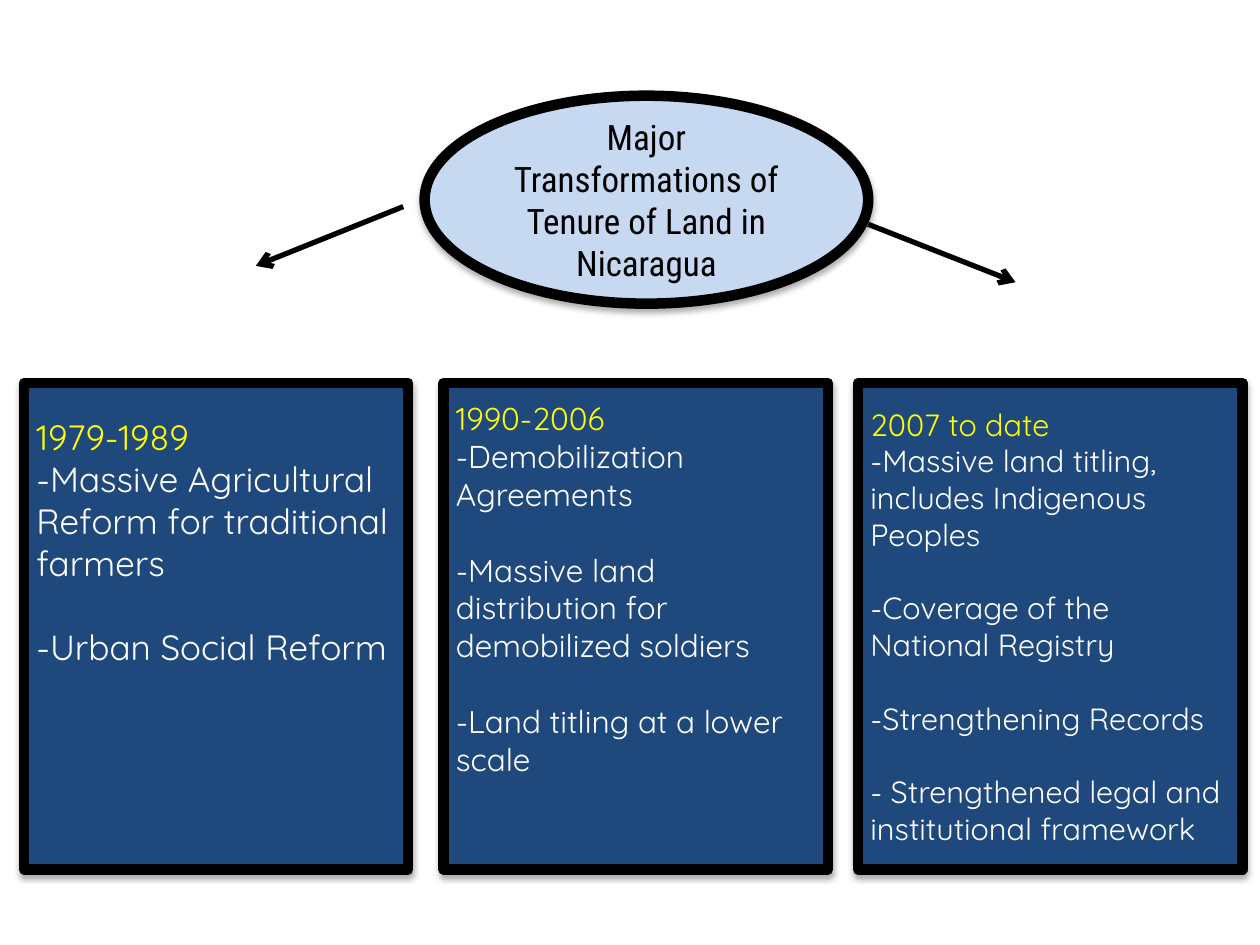
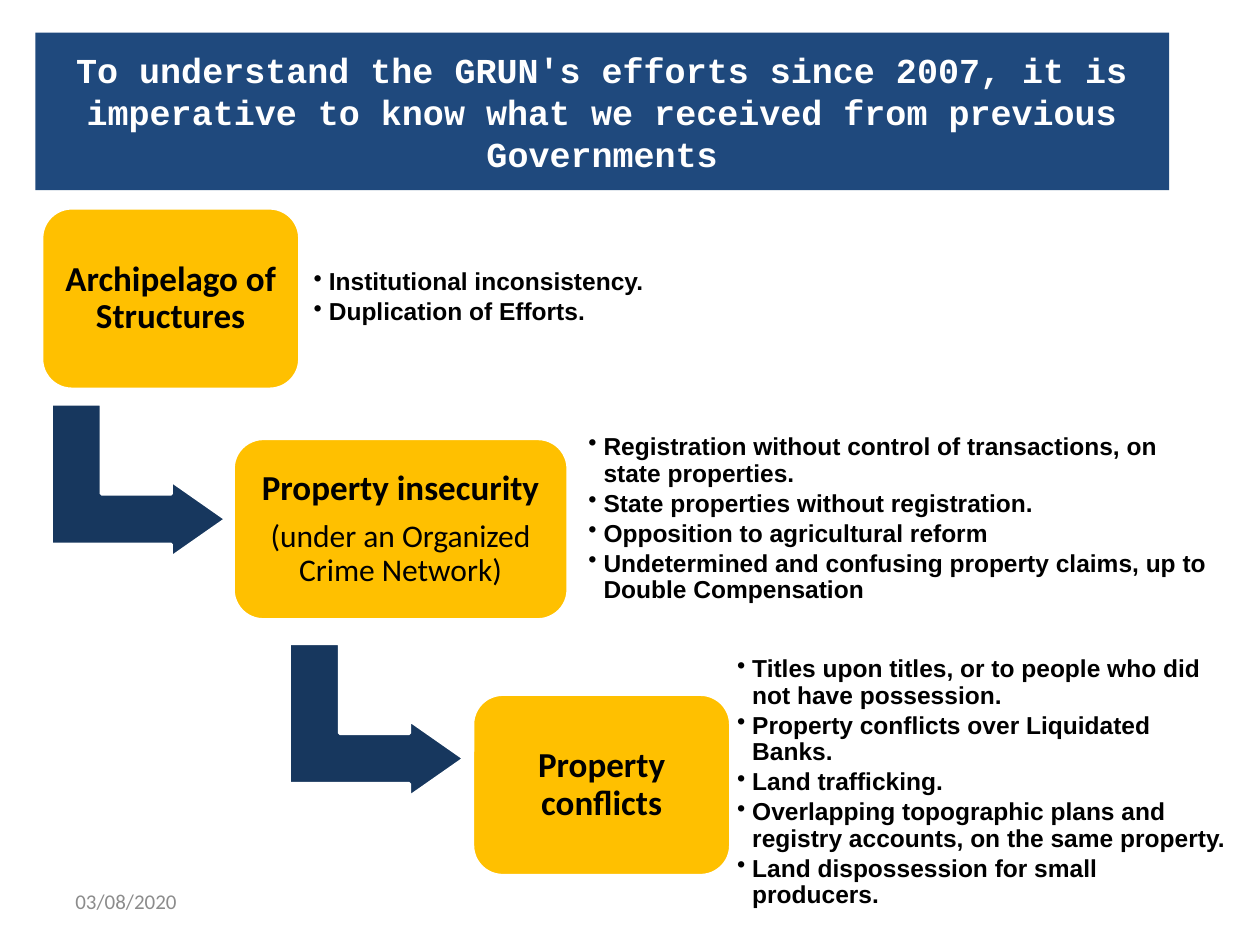
from typing import NamedTuple

from lxml import etree
from pptx import Presentation
from pptx.dml.color import RGBColor
from pptx.enum.shapes import MSO_CONNECTOR, MSO_SHAPE
from pptx.enum.text import MSO_ANCHOR, MSO_AUTO_SIZE, PP_ALIGN
from pptx.oxml.ns import qn
from pptx.util import Inches, Pt

ELLIPSE, RECTANGLE = MSO_SHAPE.OVAL, MSO_SHAPE.RECTANGLE
ROUNDED, BENT_ARROW = MSO_SHAPE.ROUNDED_RECTANGLE, MSO_SHAPE.BENT_UP_ARROW
STRAIGHT = MSO_CONNECTOR.STRAIGHT
TOP, MIDDLE = MSO_ANCHOR.TOP, MSO_ANCHOR.MIDDLE
LEFT, CENTER = PP_ALIGN.LEFT, PP_ALIGN.CENTER
NO_AUTOFIT = MSO_AUTO_SIZE.NONE
TITLE_ONLY, BLANK = 5, 6

BLACK = RGBColor(0x00, 0x00, 0x00)
WHITE = RGBColor(0xFF, 0xFF, 0xFF)
YELLOW = RGBColor(0xFF, 0xFF, 0x00)
NAVY = RGBColor(0x1F, 0x49, 0x7D)
DARK_NAVY = RGBColor(0x17, 0x37, 0x5E)
PALE_BLUE = RGBColor(0xC6, 0xD9, 0xF1)
AMBER = RGBColor(0xFF, 0xC0, 0x00)
GRAY = RGBColor(0x8C, 0x8C, 0x8C)

TOPIC_FONT = {"name": "Roboto Condensed", "size": Pt(20), "color": BLACK}
TITLE_FONT = {"name": "Courier New", "size": Pt(20), "color": WHITE, "bold": True}
STEP_FONT = {"name": "Calibri", "size": Pt(20), "color": BLACK, "bold": True}
NOTE_FONT = {"name": "Calibri", "size": Pt(18), "color": BLACK, "bold": False}
BULLET_FONT = {"name": "Arial", "size": Pt(14), "color": BLACK, "bold": True}
DATE_FONT = {"name": "Calibri", "size": Pt(12), "color": GRAY}

STEP_SPACING = {"alignment": CENTER, "line_spacing": 0.9, "space_after": Pt(7)}
BULLET_SPACING = {"alignment": LEFT, "line_spacing": 0.9, "space_after": Pt(2)}

PANEL_TOP, PANEL_WIDTH, PANEL_HEIGHT = 3.04, 3.05, 3.86
STEP_HEIGHT = 1.44


class Box(NamedTuple):
    """Left, top, width and height in inches."""
    left: float
    top: float
    width: float
    height: float

    def lengths(self) -> list:
        return [Inches(value) for value in self]


class Era(NamedTuple):
    left: float
    size: float
    text_top: float
    years: str
    changes: list


class Step(NamedTuple):
    box: Box
    heading: str
    note: str
    bullets_box: Box
    bullets: list


ERAS = [
    Era(0.19, 20, 0.26, "1979-1989", [
        "-Massive Agricultural Reform for traditional farmers",
        "-Urban Social Reform"]),
    Era(3.52, 18, 0.13, "1990-2006", [
        "-Demobilization Agreements",
        "-Massive land distribution for demobilized soldiers",
        "-Land titling at a lower scale"]),
    Era(6.81, 17.5, 0.18, "2007 to date", [
        "-Massive land titling, includes Indigenous Peoples",
        "-Coverage of the National Registry",
        "-Strengthening Records",
        "- Strengthened legal and institutional framework"]),
]
ERA_ARROWS = [((3.2, 1.64), (2.03, 2.11)), ((6.89, 1.78), (8.06, 2.24))]

STEPS = [
    Step(Box(0.33, 1.65, 2.05, STEP_HEIGHT), "Archipelago of Structures", "",
         Box(2.43, 1.82, 3.85, 1.09), [
             "Institutional inconsistency.",
             "Duplication of Efforts."]),
    Step(Box(1.85, 3.48, 2.66, STEP_HEIGHT), "Property insecurity",
         "(under an Organized Crime Network)",
         Box(4.61, 3.12, 5.12, 2), [
             "Registration without control of transactions, on state properties.",
             "State properties without registration.",
             "Opposition to agricultural reform",
             "Undetermined and confusing property claims, up to Double Compensation"]),
    Step(Box(3.75, 5.51, 2.05, STEP_HEIGHT), "Property conflicts", "",
         Box(5.79, 5.18, 4.02, 2.07), [
             "Titles upon titles, or to people who did not have possession.",
             "Property conflicts over Liquidated Banks.",
             "Land trafficking.",
             "Overlapping topographic plans and registry accounts, on the same property.",
             "Land dispossession for small producers."]),
]
STEP_ARROWS = [Box(0.49, 3.12, 1.22, 1.39), Box(2.38, 5.02, 1.22, 1.39)]


def set_all(target, values: dict) -> None:
    for name, value in values.items():
        setattr(target, name, value)


def write(frame, text: str, font: dict, spacing: dict):
    """Fill the first paragraph if it is empty, otherwise add one."""
    para = frame.paragraphs[0]
    if para.runs:
        para = frame.add_paragraph()
    set_all(para, spacing)
    span = para.add_run()
    span.text = text
    set_all(span.font, {key: font[key] for key in font if key != "color"})
    span.font.color.rgb = font["color"]
    return para


def set_frame(frame, anchor=MIDDLE, margin: float | None = None) -> None:
    set_all(frame, {"word_wrap": True, "auto_size": NO_AUTOFIT,
                    "vertical_anchor": anchor})
    if margin is not None:
        sides = ("left", "top", "right", "bottom")
        set_all(frame, {f"margin_{side}": Inches(margin) for side in sides})


def add_figure(page, kind, box: Box, fill: RGBColor, line: RGBColor, width: float):
    figure = page.shapes.add_shape(kind, *box.lengths())
    figure.shadow.inherit = False
    figure.fill.solid()
    figure.fill.fore_color.rgb = fill
    figure.line.color.rgb = line
    figure.line.width = Pt(width)
    set_frame(figure.text_frame)
    return figure


def add_shadowed_figure(page, kind, box: Box, fill: RGBColor):
    """Draw a figure with a heavy black outline and a soft shadow below."""
    figure = add_figure(page, kind, box, fill, BLACK, 6)
    effects = figure._element.spPr.find(qn("a:effectLst"))
    shadow = etree.SubElement(effects, qn("a:outerShdw"), blurRad=str(Pt(3.5)),
                              dist=str(Pt(2.2)), dir="5400000", rotWithShape="0")
    color = etree.SubElement(shadow, qn("a:srgbClr"), val=str(BLACK))
    etree.SubElement(color, qn("a:alpha"), val="32000")
    return figure


def add_arrow(page, start: tuple, end: tuple) -> None:
    points = [Inches(value) for value in start + end]
    arrow = page.shapes.add_connector(STRAIGHT, *points)
    arrow.line.color.rgb = BLACK
    arrow.line.width = Pt(3)
    properties = arrow._element.spPr
    etree.SubElement(properties.find(qn("a:ln")), qn("a:tailEnd"), type="arrow")
    etree.SubElement(properties, qn("a:effectLst"))


def add_text_box(page, box: Box, margin: float | None = None):
    frame = page.shapes.add_textbox(*box.lengths()).text_frame
    set_frame(frame, margin=margin)
    return frame


def add_era(page, era: Era) -> None:
    box = Box(era.left, PANEL_TOP, PANEL_WIDTH, PANEL_HEIGHT)
    frame = add_shadowed_figure(page, RECTANGLE, box, NAVY).text_frame
    frame.vertical_anchor = TOP
    frame.margin_top = Inches(era.text_top)
    font = {"name": "Quicksand", "size": Pt(era.size), "color": WHITE}
    write(frame, era.years, font | {"color": YELLOW}, {"alignment": LEFT})
    for index, change in enumerate(era.changes):
        gap = Pt(era.size * 1.2) if index else Pt(0)
        write(frame, change, font, {"alignment": LEFT, "space_before": gap})


def add_step(page, step: Step) -> None:
    card = add_figure(page, ROUNDED, step.box, AMBER, WHITE, 2)
    set_frame(card.text_frame, margin=0.08)
    write(card.text_frame, step.heading, STEP_FONT, STEP_SPACING)
    if step.note:
        write(card.text_frame, step.note, NOTE_FONT, STEP_SPACING)

    frame = add_text_box(page, step.bullets_box, margin=0.06)
    for text in step.bullets:
        para = write(frame, text, BULLET_FONT, BULLET_SPACING)
        properties = para._p.get_or_add_pPr()
        properties.set("marL", str(Inches(0.12)))
        properties.set("indent", str(Inches(-0.12)))
        etree.SubElement(properties, qn("a:buChar"), char="•")


def add_step_arrow(page, box: Box) -> None:
    arrow = add_figure(page, BENT_ARROW, box, DARK_NAVY, WHITE, 2)
    arrow.rotation = 90
    for index, value in enumerate((0.328, 0.25, 0.358)):
        arrow.adjustments[index] = value


def set_title(page, text: str) -> None:
    title = page.shapes.title
    box = Box(0.28, 0.26, 9, 1.25)
    set_all(title, dict(zip(("left", "top", "width", "height"), box.lengths())))
    title.fill.solid()
    title.fill.fore_color.rgb = NAVY
    set_frame(title.text_frame)
    write(title.text_frame, text, TITLE_FONT, {"alignment": CENTER})


def build_transformations(deck) -> None:
    page = deck.slides.add_slide(deck.slide_layouts[BLANK])
    topic = add_shadowed_figure(page, ELLIPSE, Box(3.37, 0.76, 3.52, 1.65), PALE_BLUE)
    write(topic.text_frame, "Major Transformations of Tenure of Land in Nicaragua",
          TOPIC_FONT, {"alignment": CENTER})
    for start, end in ERA_ARROWS:
        add_arrow(page, start, end)
    for era in ERAS:
        add_era(page, era)


def build_inheritance(deck) -> None:
    page = deck.slides.add_slide(deck.slide_layouts[TITLE_ONLY])
    set_title(page, "To understand the GRUN's efforts since 2007, it is imperative "
                    "to know what we received from previous Governments")
    for box in STEP_ARROWS:
        add_step_arrow(page, box)
    for step in STEPS:
        add_step(page, step)
    date = add_text_box(page, Box(0.5, 6.95, 2.33, 0.4))
    write(date, "03/08/2020", DATE_FONT, {"alignment": LEFT})


def main() -> None:
    deck = Presentation()
    deck.slide_width, deck.slide_height = Inches(10), Inches(7.5)
    build_transformations(deck)
    build_inheritance(deck)
    deck.save("out.pptx")


if __name__ == "__main__":
    main()
